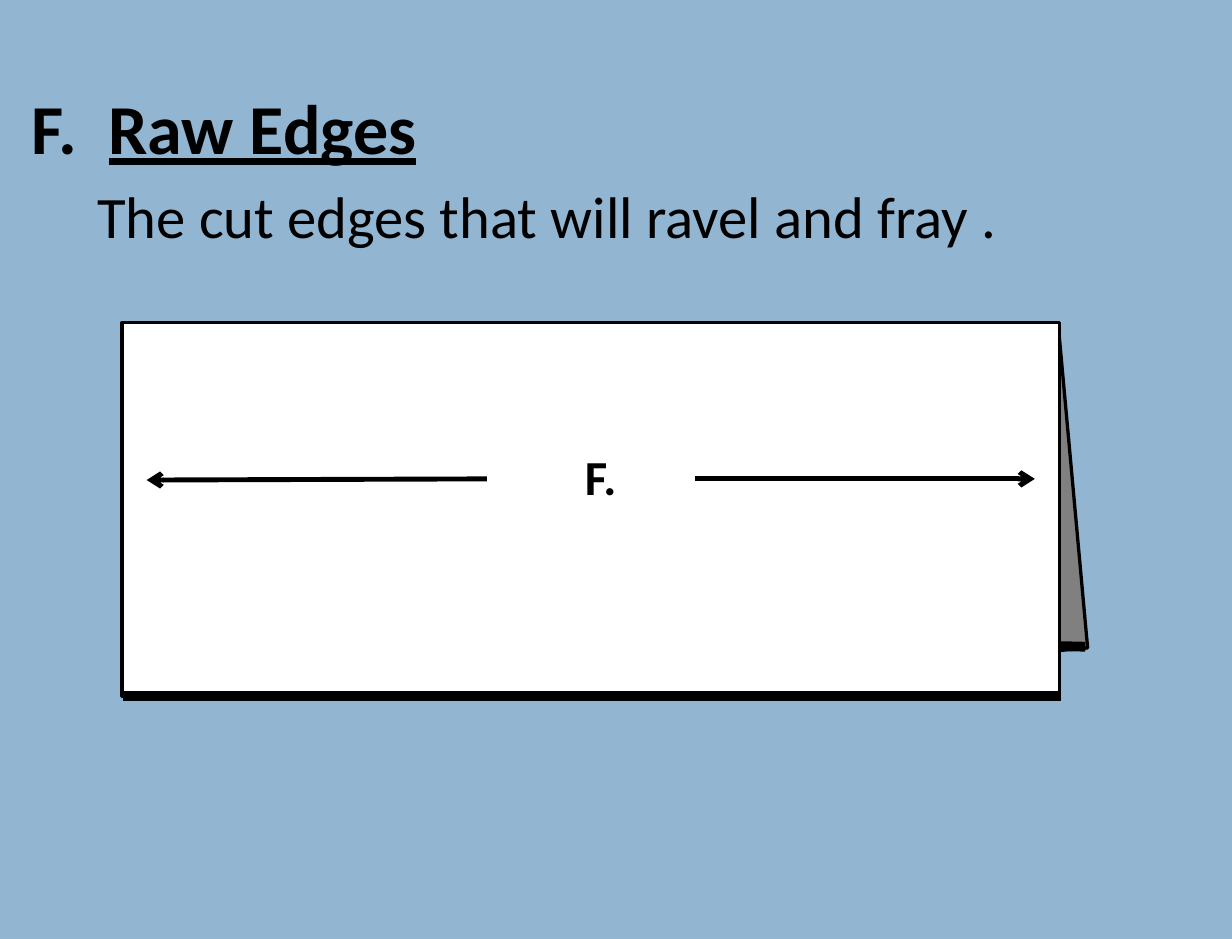
"""Build the Raw Edges slide: a definition above a folded piece of fabric."""
from dataclasses import dataclass

from lxml.etree import SubElement
from pptx import Presentation
from pptx.dml.color import RGBColor
from pptx.enum.shapes import MSO_CONNECTOR, MSO_SHAPE
from pptx.enum.text import MSO_AUTO_SIZE, PP_ALIGN
from pptx.oxml.ns import qn
from pptx.util import Inches, Pt


@dataclass(frozen=True)
class Theme:
    background: RGBColor = RGBColor(0x92, 0xB5, 0xD2)
    ink: RGBColor = RGBColor(0, 0, 0)
    front: RGBColor = RGBColor(0xFF, 0xFF, 0xFF)
    back: RGBColor = RGBColor(0x80, 0x80, 0x80)
    font: str = "Calibri"
    title: Pt = Pt(43)
    body: Pt = Pt(36)
    label: Pt = Pt(30)
    outline: Pt = Pt(2)
    arrow: Pt = Pt(3)
    edge: Pt = Pt(6)


theme = Theme()


def add_span(para, text, **formats):
    span = para.add_run()
    span.text = text
    span.font.color.rgb = theme.ink
    for name, value in {"name": theme.font, **formats}.items():
        setattr(span.font, name, value)


def add_line(page, start, end, width, arrow=False):
    line = page.shapes.add_connector(
        MSO_CONNECTOR.STRAIGHT, *(Inches(value) for value in start + end)
    )
    line.line.color.rgb = theme.ink
    line.line.width = width
    if arrow:
        SubElement(line.line._get_or_add_ln(), qn("a:tailEnd"), type="arrow")
    SubElement(line._element.spPr, qn("a:effectLst"))


deck = Presentation()
deck.slide_width, deck.slide_height = Inches(10.5), Inches(8)
page = deck.slides.add_slide(deck.slide_layouts[6])
page.background.fill.solid()
page.background.fill.fore_color.rgb = theme.background

box = page.shapes.add_textbox(Inches(0.16), Inches(0.67), Inches(10.17), Inches(1.7))
frame = box.text_frame
frame.word_wrap = True
frame.margin_left = frame.margin_right = Inches(0.11)
heading, definition = frame.paragraphs[0], frame.add_paragraph()
for para, first_indent, space in ((heading, -0.56, 8), (definition, 0, 7)):
    para.space_before = Pt(space)
    properties = para._p.get_or_add_pPr()
    properties.set("marL", str(Inches(0.56)))
    properties.set("indent", str(Inches(first_indent)))
add_span(heading, "F.  ", size=theme.title, bold=True)
add_span(heading, "Raw Edges", size=theme.title, bold=True, underline=True)
add_span(definition, "The cut edges that will ravel and fray .", size=theme.body)

outline = page.shapes.build_freeform(Inches(9.02), Inches(2.77), scale=1.0)
outline.add_line_segments(
    [(Inches(x), Inches(y)) for x, y in ((9.27, 5.52), (8.83, 5.56))], close=True
)
back = outline.convert_to_shape()
add_line(page, (8.83, 5.5), (9.25, 5.51), theme.edge)
front = page.shapes.add_shape(
    MSO_SHAPE.RECTANGLE, Inches(1.04), Inches(2.75), Inches(7.99), Inches(3.18)
)
for layer, color in ((back, theme.back), (front, theme.front)):
    layer.shadow.inherit = False
    layer.fill.solid()
    layer.fill.fore_color.rgb = color
    layer.line.color.rgb = theme.ink
    layer.line.width = theme.outline
add_line(page, (1.05, 5.93), (9.04, 5.93), theme.edge)

label = page.shapes.add_textbox(Inches(4.83), Inches(3.76), Inches(0.58), Inches(0.61))
label.text_frame.word_wrap = False
label.text_frame.auto_size = MSO_AUTO_SIZE.SHAPE_TO_FIT_TEXT
label_para = label.text_frame.paragraphs[0]
label_para.alignment = PP_ALIGN.CENTER
add_span(label_para, "F.", size=theme.label, bold=True)

for start, end in (((5.92, 4.08), (8.82, 4.08)), ((4.15, 4.08), (1.25, 4.09))):
    add_line(page, start, end, theme.arrow, arrow=True)

deck.save("out.pptx")
